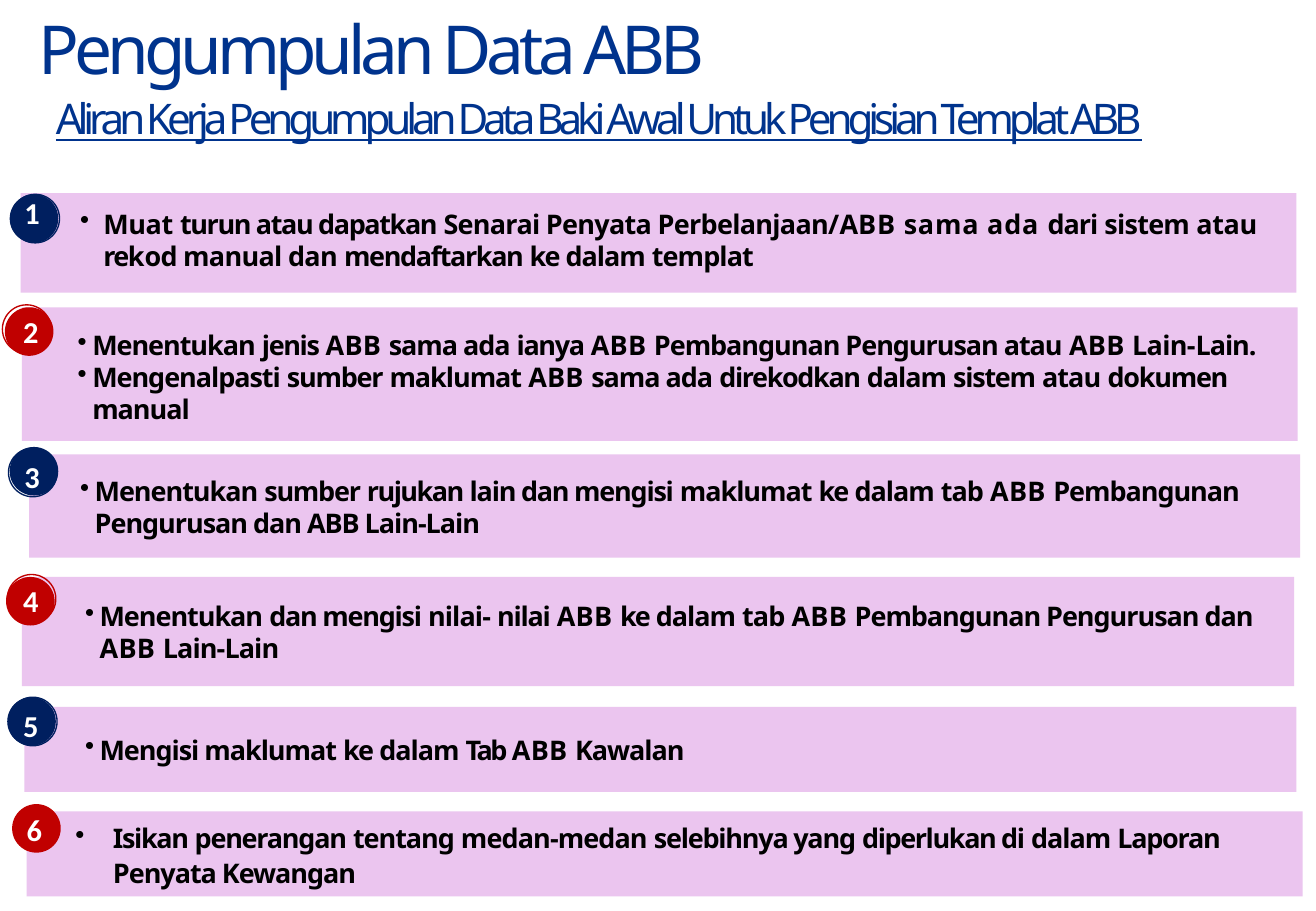
from dataclasses import dataclass
from typing import NamedTuple

from lxml import etree
from pptx import Presentation
from pptx.dml.color import RGBColor
from pptx.enum.shapes import MSO_SHAPE
from pptx.oxml.ns import qn
from pptx.util import Emu, Pt

EMU_PER_PX = 9144
RECTANGLE = MSO_SHAPE.RECTANGLE
OVAL = MSO_SHAPE.OVAL
WHITE = RGBColor(0xFF, 0xFF, 0xFF)
BLACK = RGBColor(0x00, 0x00, 0x00)
BLUE = RGBColor(0x00, 0x33, 0x8D)
NAVY = RGBColor(0x00, 0x1F, 0x5F)
RED = RGBColor(0xC0, 0x00, 0x00)
LILAC = RGBColor(0xEB, 0xC5, 0xEF)
BADGE_SIZE = 40


class Span(NamedTuple):
    text: str
    spacing: float = 0


class Area(NamedTuple):
    left: int
    top: int
    width: int
    height: int


class Spot(NamedTuple):
    left: int
    top: int


class Style(NamedTuple):
    font: str
    size: int
    color: RGBColor
    bold: bool = False
    underline: bool = False


@dataclass
class Step:
    band: Area
    text_area: Area
    disc: Spot
    ring: Spot | None
    digit: Spot
    items: list[list[Span]]
    margin: int = 13
    hanging: int = 12
    leading: float = 19


TITLE_STYLE = Style("Noto Sans", 40, BLUE)
SUBTITLE_STYLE = Style("Noto Sans", 25, BLUE, underline=True)
STEP_STYLE = Style("Noto Sans", 16, BLACK, bold=True)
DIGIT_STYLE = Style("Calibri", 18, WHITE, bold=True)
ABB = Span("ABB ", 0.2)
KE = Span("ke ", -1.1)
DALAM = Span("dalam ", -0.6)
TAB = Span("tab ", -0.5)
MENENTUKAN = Span("Menentukan ", -0.6)
MAKLUMAT = Span("maklumat ", -0.6)
SAMA_ADA = Span("sama ada ", -0.6)

STEPS = [
    Step(Area(17, 159, 1050, 82), Area(65, 171, 1018, 55),
         Spot(8, 160), Spot(9, 160), Spot(20, 160),
         [[Span("Muat ", -0.2), Span("turun atau dapatkan ", -0.8),
           Span("Senarai ", -0.4), Span("Penyata Perbelanjaan/", -0.4),
           Span("A", -0.9), Span("BB sama ada ", 0.5), Span("dari ", -0.6),
           Span("sistem ", -0.4), Span("atau ", -0.2), Span("rek", -0.9),
           Span("od manual dan ", -0.4), Span("mendaftarkan ", -0.8),
           KE, DALAM, Span("templat", -0.5)]],
         margin=20, hanging=19),
    Step(Area(18, 253, 1050, 110), Area(63, 271, 1004, 81),
         Spot(4, 253), Spot(2, 251), Spot(19, 258),
         [[MENENTUKAN, Span("jenis ", -0.8), ABB, SAMA_ADA,
           Span("ianya ", -0.8), ABB,
           Span("Pembangunan Pengurusan atau ", -0.6), ABB,
           Span("Lain-", -0.4), Span("Lain.", -0.6)],
          [Span("Mengenalpasti ", -0.6), Span("sumber ", -0.7), MAKLUMAT,
           ABB, SAMA_ADA, Span("direkodkan ", -0.8), DALAM,
           Span("sistem ", -0.7), Span("atau ", -0.5),
           Span("dokumen ", -0.7), Span("manual", -0.6)]]),
    Step(Area(24, 374, 1046, 85), Area(65, 391, 1013, 55),
         Spot(8, 368), Spot(7, 369), Spot(20, 377),
         [[MENENTUKAN, Span("sumber ", -0.7), Span("rujukan ", -0.9),
           Span("lain dan mengisi ", -0.7), MAKLUMAT, KE, DALAM, TAB, ABB,
           Span("Pembangunan Pengurusan dan ABB Lain-Lain", -0.6)]]),
    Step(Area(18, 475, 1047, 90), Area(69, 494, 975, 55),
         Spot(5, 475), Spot(6, 473), Spot(19, 479),
         [[MENENTUKAN, Span("dan mengisi ", -0.7), Span("nilai- ", -0.5),
           Span("nilai ", -0.7), ABB, KE, DALAM, TAB, ABB,
           Span("Pembangunan Pengurusan dan ", -0.6), ABB,
           Span("Lain-Lain", -0.5)]]),
    Step(Area(20, 582, 1047, 70), Area(69, 604, 975, 28),
         Spot(6, 574), Spot(7, 574), Spot(19, 582),
         [[Span("Mengisi maklumat ", -0.6), Span("ke ", -1), DALAM,
           Span("Tab ", -1.5), ABB, Span("Kawalan", -0.6)]]),
    Step(Area(22, 668, 1050, 70), Area(60, 674, 985, 60),
         Spot(10, 662), None, Spot(22, 668),
         [[Span("Isikan ", -0.8), Span("penerangan ", -0.7),
           Span("tentang ", -0.6), Span("medan-medan ", -0.5),
           Span("selebihnya yang ", -0.7), Span("diperlukan di ", -0.8),
           DALAM, Span("Laporan ", -0.7), Span("Penyata Kewangan", -0.6)]],
         margin=33, hanging=31, leading=20.9),
]


def px(length: int) -> Emu:
    return Emu(length * EMU_PER_PX)


def add_figure(page, kind, area: Area, fill: RGBColor | None = None,
               line: RGBColor | None = None) -> None:
    shape = page.shapes.add_shape(kind, *map(px, area))
    shape.shadow.inherit = False
    if fill is None:
        shape.fill.background()
    else:
        shape.fill.solid()
        shape.fill.fore_color.rgb = fill
    if line is None:
        shape.line.fill.background()
    else:
        shape.line.color.rgb = line
        shape.line.width = Pt(0.78)


def add_text_frame(page, area: Area):
    frame = page.shapes.add_textbox(*map(px, area)).text_frame
    frame.word_wrap = True
    frame.margin_left = frame.margin_right = 0
    frame.margin_top = frame.margin_bottom = 0
    return frame


def write_spans(para, spans: list[Span], style: Style) -> None:
    para.font.name = style.font
    para.font.size = Pt(style.size)
    para.font.color.rgb = style.color
    para.font.bold = style.bold
    para.font.underline = style.underline
    for span in spans:
        run = para.add_run()
        run.text = span.text
        run._r.get_or_add_rPr().set("spc", str(round(span.spacing * 100)))


def add_label(page, area: Area, span: Span, style: Style) -> None:
    write_spans(add_text_frame(page, area).paragraphs[0], [span], style)


def add_bullet(para, step: Step) -> None:
    para.line_spacing = Pt(step.leading)
    properties = para._p.get_or_add_pPr()
    properties.set("marL", str(px(step.margin)))
    properties.set("indent", str(-px(step.hanging)))
    etree.SubElement(properties, qn("a:buChar")).set("char", "•")


def add_step(page, number: int, step: Step) -> None:
    badge_color = NAVY if number % 2 else RED
    add_figure(page, RECTANGLE, step.band, fill=LILAC)
    add_figure(page, OVAL, Area(*step.disc, BADGE_SIZE, BADGE_SIZE), fill=badge_color)
    if step.ring:
        add_figure(page, OVAL, Area(*step.ring, BADGE_SIZE, BADGE_SIZE), line=badge_color)
    add_label(page, Area(*step.digit, 15, 31), Span(str(number)), DIGIT_STYLE)
    frame = add_text_frame(page, step.text_area)
    for index, spans in enumerate(step.items):
        para = frame.add_paragraph() if index else frame.paragraphs[0]
        add_bullet(para, step)
        write_spans(para, spans, STEP_STYLE)


def main() -> None:
    deck = Presentation()
    deck.slide_width, deck.slide_height = px(1083), px(750)
    page = deck.slides.add_slide(deck.slide_layouts[6])
    add_label(page, Area(32, 6, 677, 76), Span("Pengumpulan Data ABB", -3), TITLE_STYLE)
    add_label(page, Area(46, 76, 1010, 47),
              Span("Aliran Kerja Pengumpulan Data Baki Awal Untuk Pengisian Templat ABB", -3),
              SUBTITLE_STYLE)
    for number, step in enumerate(STEPS, start=1):
        add_step(page, number, step)
    deck.save("out.pptx")


if __name__ == "__main__":
    main()
